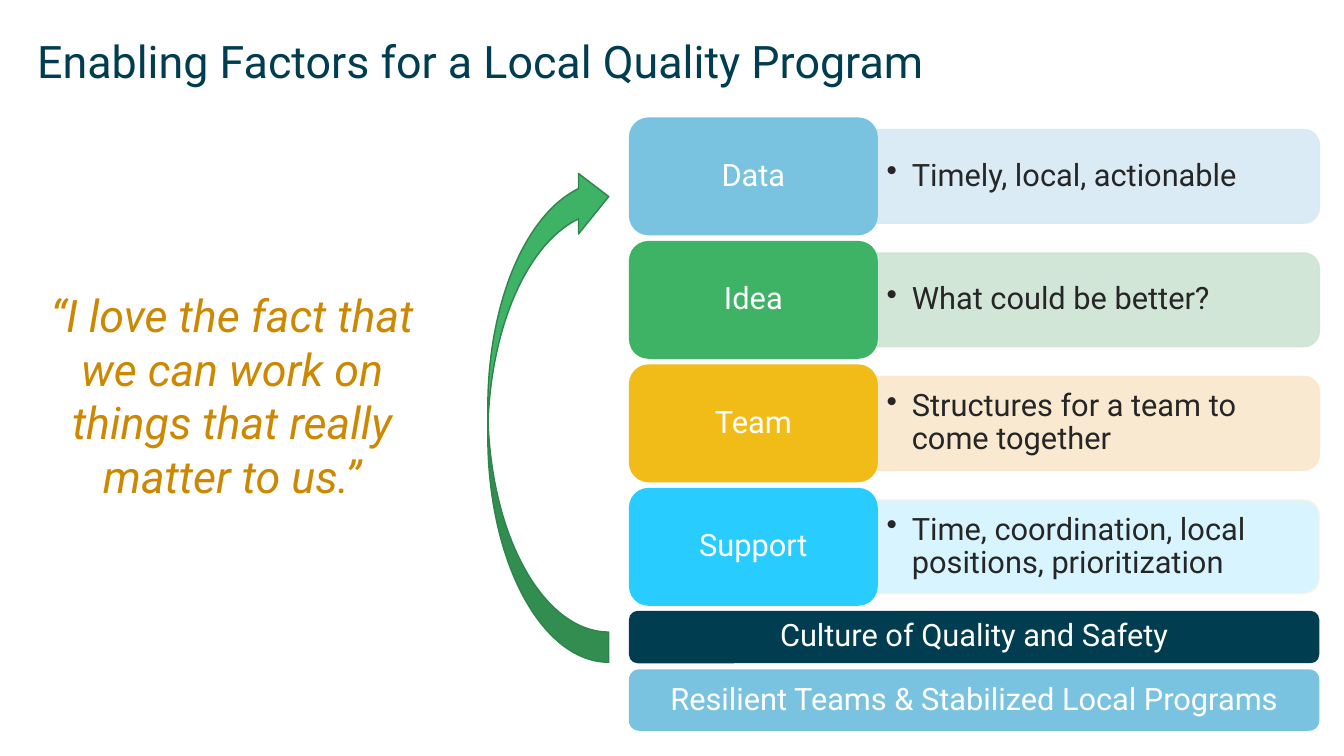
"""Build a slide on the enabling factors for a local quality program."""
from dataclasses import dataclass

from lxml import etree
from pptx import Presentation
from pptx.dml.color import RGBColor
from pptx.enum.shapes import MSO_SHAPE
from pptx.enum.text import MSO_ANCHOR, PP_ALIGN
from pptx.oxml.ns import qn
from pptx.shapes.autoshape import Shape
from pptx.slide import Slide
from pptx.util import Pt

ROUND = MSO_SHAPE.ROUNDED_RECTANGLE
TAB = MSO_SHAPE.ROUND_2_SAME_RECTANGLE
ARROW = MSO_SHAPE.CURVED_LEFT_ARROW
MIDDLE = MSO_ANCHOR.MIDDLE
LEFT, CENTER = PP_ALIGN.LEFT, PP_ALIGN.CENTER

PX = 914400 // 200
FONT = "Roboto"
COLORS = {
    "navy": "003D50", "blue": "79C3E1", "green": "3EB265", "gold": "F2BC18",
    "cyan": "28CCFF", "white": "FFFFFF", "ink": "262626", "amber": "CC8800",
    "forest": "2E844B", "pale blue": "D7E9F4", "pale green": "CEE4D3",
    "pale gold": "FAE7CC", "pale cyan": "D4F5FF", "cream": "FFF2DE",
}


@dataclass(frozen=True)
class Box:
    x: int
    y: int
    w: int
    h: int

    def emu(self) -> tuple[int, int, int, int]:
        return self.x * PX, self.y * PX, self.w * PX, self.h * PX


@dataclass(frozen=True)
class Factor:
    name: str
    detail: str
    fill: str
    pale: str
    edge: str


@dataclass(frozen=True)
class Base:
    text: str
    fill: str
    y: int
    h: int


FACTORS = (
    Factor("Data", "Timely, local, actionable", "blue", "pale blue", "pale blue"),
    Factor("Idea", "What could be better?", "green", "pale green", "pale green"),
    Factor("Team", "Structures for a team to come together",
           "gold", "pale gold", "pale gold"),
    Factor("Support", "Time, coordination, local positions, prioritization",
           "cyan", "pale cyan", "cream"),
)
BASES = (
    Base("Culture of Quality and Safety", "navy", 1212, 104),
    Base("Resilient Teams & Stabilized Local Programs", "blue", 1328, 122),
)
STACK = Box(1248, 233, 1370, 245)
CARD = Box(1248, 0, 494, 234)
PANEL = Box(1740, 0, 878, 186)
NOTE = Box(1740, 0, 868, 168)


def rgb(name: str) -> RGBColor:
    return RGBColor.from_string(COLORS[name])


def draw(slide: Slide, kind: int, box: Box, fill: str = "", edge: str = "") -> Shape:
    shape = slide.shapes.add_shape(kind, *box.emu())
    shape.shadow.inherit = False
    if fill:
        shape.fill.solid()
        shape.fill.fore_color.rgb = rgb(fill)
    else:
        shape.fill.background()
    if edge:
        shape.line.color.rgb = rgb(edge)
        shape.line.width = Pt(1)
    else:
        shape.line.fill.background()
    return shape


def write(shape: Shape, text: str, color: str, size: int = 22, align: int = CENTER,
          space: float = 0.9, bullet: bool = False, slant: bool = False) -> None:
    frame = shape.text_frame
    frame.word_wrap = True
    frame.vertical_anchor = MIDDLE
    para = frame.paragraphs[0]
    para.text = text
    para.alignment = align
    para.line_spacing = space
    if bullet:
        props = para._p.get_or_add_pPr()
        props.set("marL", str(50 * PX))
        props.set("indent", str(-50 * PX))
        etree.SubElement(props, qn("a:buChar"), char="•")
    para.font.name = FONT
    para.font.size = Pt(size)
    para.font.italic = slant
    para.font.color.rgb = rgb(color)


def label(slide: Slide, box: Box) -> Shape:
    return slide.shapes.add_textbox(*box.emu())


def fade(shape: Shape, share: int) -> None:
    for color in shape._element.spPr.iter(qn("a:srgbClr")):
        etree.SubElement(color, qn("a:alpha"), val=str(share * 1000))


def add_factor(slide: Slide, item: Factor, top: int) -> None:
    mid = top + CARD.h // 2
    side = Box(PANEL.x + (PANEL.w - PANEL.h) // 2, mid - PANEL.w // 2,
               PANEL.h, PANEL.w)
    panel = draw(slide, TAB, side, item.pale, item.edge)
    panel.rotation = 90
    fade(panel, 90)
    note = label(slide, Box(NOTE.x, mid - NOTE.h // 2, NOTE.w, NOTE.h))
    write(note, item.detail, "ink", align=LEFT, bullet=True)
    card = draw(slide, ROUND, Box(CARD.x, top, CARD.w, CARD.h), item.fill)
    write(card, item.name, "white")


def main() -> None:
    deck = Presentation()
    deck.slide_width, deck.slide_height = 2667 * PX, 1500 * PX
    slide = deck.slides.add_slide(deck.slide_layouts[6])
    title = label(slide, Box(54, 52, 1942, 152))
    write(title, "Enabling Factors for a Local Quality Program", "navy", 32, LEFT)
    for row, item in enumerate(FACTORS):
        add_factor(slide, item, STACK.y + row * STACK.h)
    for base in BASES:
        bar = draw(slide, ROUND, Box(STACK.x, base.y, STACK.w, base.h), base.fill)
        write(bar, base.text, "white")
    arrow = draw(slide, ARROW, Box(968, 330, 240, 984), "green", "forest")
    arrow.rotation = 180
    quote = draw(slide, ROUND, Box(26, 534, 870, 500))
    write(quote, "“I love the fact that we can work on things that really matter to us.”",
          "amber", 32, space=1.0, slant=True)
    deck.save("out.pptx")


if __name__ == "__main__":
    main()
